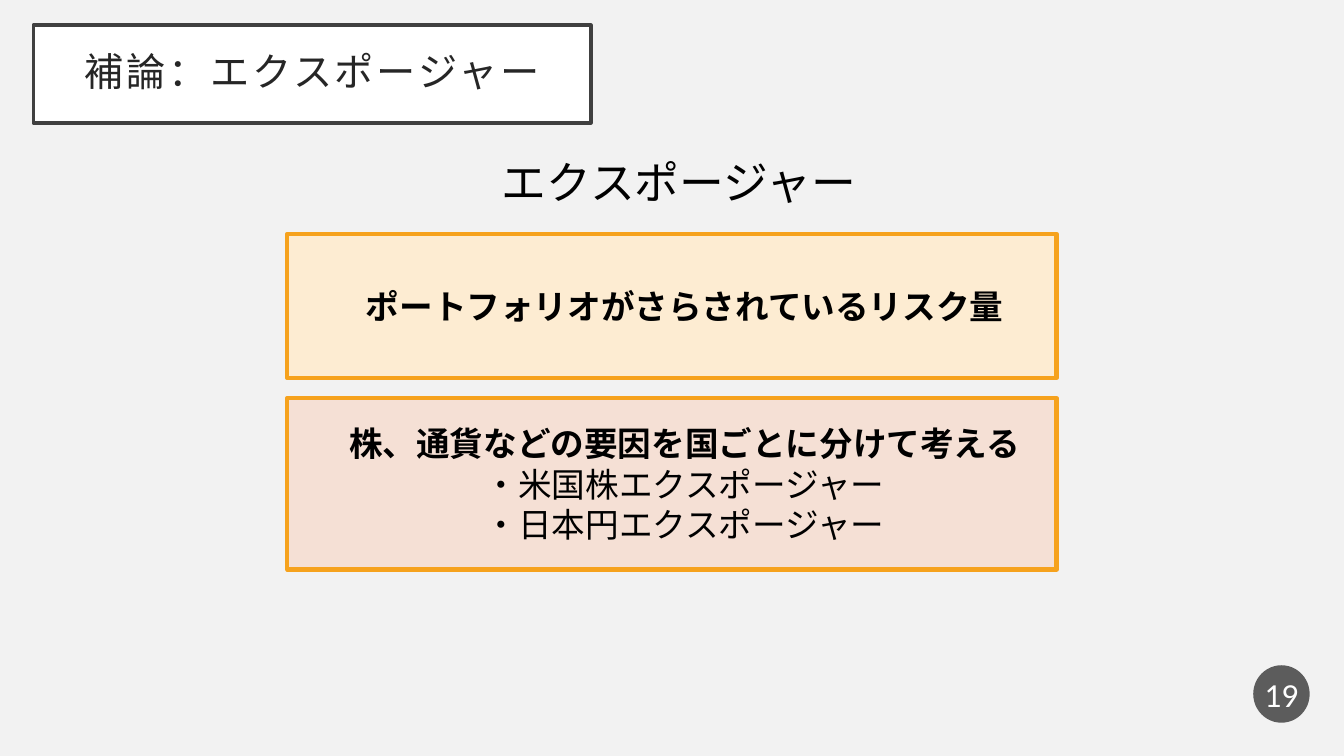
import dataclasses

import pptx
import pptx.dml.color
import pptx.enum.shapes
import pptx.enum.text
import pptx.oxml
import pptx.oxml.ns
import pptx.util

Inches = pptx.util.Inches
Pt = pptx.util.Pt
SHAPES = pptx.enum.shapes.MSO_SHAPE
ANCHOR = pptx.enum.text.MSO_ANCHOR
CENTER = pptx.enum.text.PP_ALIGN.CENTER


@dataclasses.dataclass(frozen=True)
class Theme:
    font: str = "Calibri"
    background: str = "F2F2F2"
    white: str = "FFFFFF"
    black: str = "000000"
    title_text: str = "262626"
    title_border: str = "404040"
    badge: str = "1D1D1D"
    accent: str = "F6A21D"
    definition_fill: str = "FDECD2"
    factors_fill: str = "F5E0D5"
    title_size: int = 28
    heading_size: int = 32
    body_size: int = 24


THEME = Theme()
PANEL_LEFT, PANEL_WIDTH = 2.85, 7.63


def rgb(value):
    return pptx.dml.color.RGBColor.from_string(value)


def set_values(target, values):
    for name, value in values.items():
        setattr(target, name, value)


def place(shape, left, top, width, height):
    set_values(shape, {"left": Inches(left), "top": Inches(top),
                       "width": Inches(width), "height": Inches(height)})


def paint(shape, fill, border=None, border_width=0):
    shape.fill.solid()
    shape.fill.fore_color.rgb = rgb(fill)
    if border:
        shape.line.color.rgb = rgb(border)
        shape.line.width = Pt(border_width)
    else:
        shape.line.fill.background()


def write(shape, lines, size, color, anchor=ANCHOR.MIDDLE, margins=(0.1, 0.05),
          line_spacing=None, indent=0):
    """Write centred lines, given as (text, bold) pairs."""
    side, edge = map(Inches, margins)
    frame = shape.text_frame
    set_values(frame, {
        "word_wrap": True, "auto_size": pptx.enum.text.MSO_AUTO_SIZE.NONE,
        "vertical_anchor": anchor, "margin_left": side, "margin_right": side,
        "margin_top": edge, "margin_bottom": edge})
    for number, (text, bold) in enumerate(lines):
        paragraph = frame.add_paragraph() if number else frame.paragraphs[0]
        set_values(paragraph, {"alignment": CENTER, "line_spacing": line_spacing})
        if indent:
            properties = paragraph._p.get_or_add_pPr()
            properties.set("marL", str(Inches(indent)))
            properties.set("indent", "0")
        run = paragraph.add_run()
        run.text = text
        set_values(run.font, {"name": THEME.font, "size": Pt(size), "bold": bold})
        run.font.color.rgb = rgb(color)


def add_title(slide, text):
    title = slide.shapes.title
    place(title, 0.33, 0.25, 5.53, 0.97)
    paint(title, THEME.white, THEME.title_border, 2.5)
    write(title, [(text, False)], THEME.title_size, THEME.title_text,
          margins=(0.2, 0.2), line_spacing=0.9)
    letter_spacing = str(Pt(2).centipoints)
    title.text_frame.paragraphs[0].runs[0].font._element.set("spc", letter_spacing)


def add_heading(slide, text):
    heading = slide.shapes.add_textbox(
        Inches(1.1), Inches(1.55), Inches(11.27), Inches(0.7))
    write(heading, [(text, False)], THEME.heading_size, THEME.black,
          anchor=ANCHOR.TOP, line_spacing=0.9)


def add_plain_shape(slide, kind, left, top, width, height):
    shape = slide.shapes.add_shape(
        kind, Inches(left), Inches(top), Inches(width), Inches(height))
    shape.shadow.inherit = False
    return shape


def add_panel(slide, top, height, fill, lines):
    panel = add_plain_shape(
        slide, SHAPES.RECTANGLE, PANEL_LEFT, top, PANEL_WIDTH, height)
    paint(panel, fill, THEME.accent, 3)
    write(panel, lines, THEME.body_size, THEME.black, indent=0.25)


def add_page_badge(slide, number):
    badge = add_plain_shape(slide, SHAPES.OVAL, 12.43, 6.6, 0.56, 0.57)
    paint(badge, THEME.badge)
    color = badge._element.spPr.find(
        "./" + pptx.oxml.ns.qn("a:solidFill") + "/" + pptx.oxml.ns.qn("a:srgbClr"))
    color.append(pptx.oxml.parse_xml(
        f'<a:alpha {pptx.oxml.ns.nsdecls("a")} val="70000"/>'))
    write(badge, [(number, False)], THEME.body_size, THEME.white,
          margins=(0.02, 0.05))


def main():
    deck = pptx.Presentation()
    set_values(deck, {"slide_width": Inches(13.33), "slide_height": Inches(7.5)})
    slide = deck.slides.add_slide(deck.slide_layouts.get_by_name("Title Only"))
    slide.background.fill.solid()
    slide.background.fill.fore_color.rgb = rgb(THEME.background)

    add_title(slide, "補論：エクスポージャー")
    add_heading(slide, "エクスポージャー")
    add_page_badge(slide, "19")
    add_panel(slide, 2.32, 1.43, THEME.definition_fill,
              [("ポートフォリオがさらされているリスク量", True)])
    add_panel(slide, 3.95, 1.7, THEME.factors_fill,
              [("株、通貨などの要因を国ごとに分けて考える", True),
               ("・米国株エクスポージャー", False),
               ("・日本円エクスポージャー", False)])
    deck.save("out.pptx")


if __name__ == "__main__":
    main()
